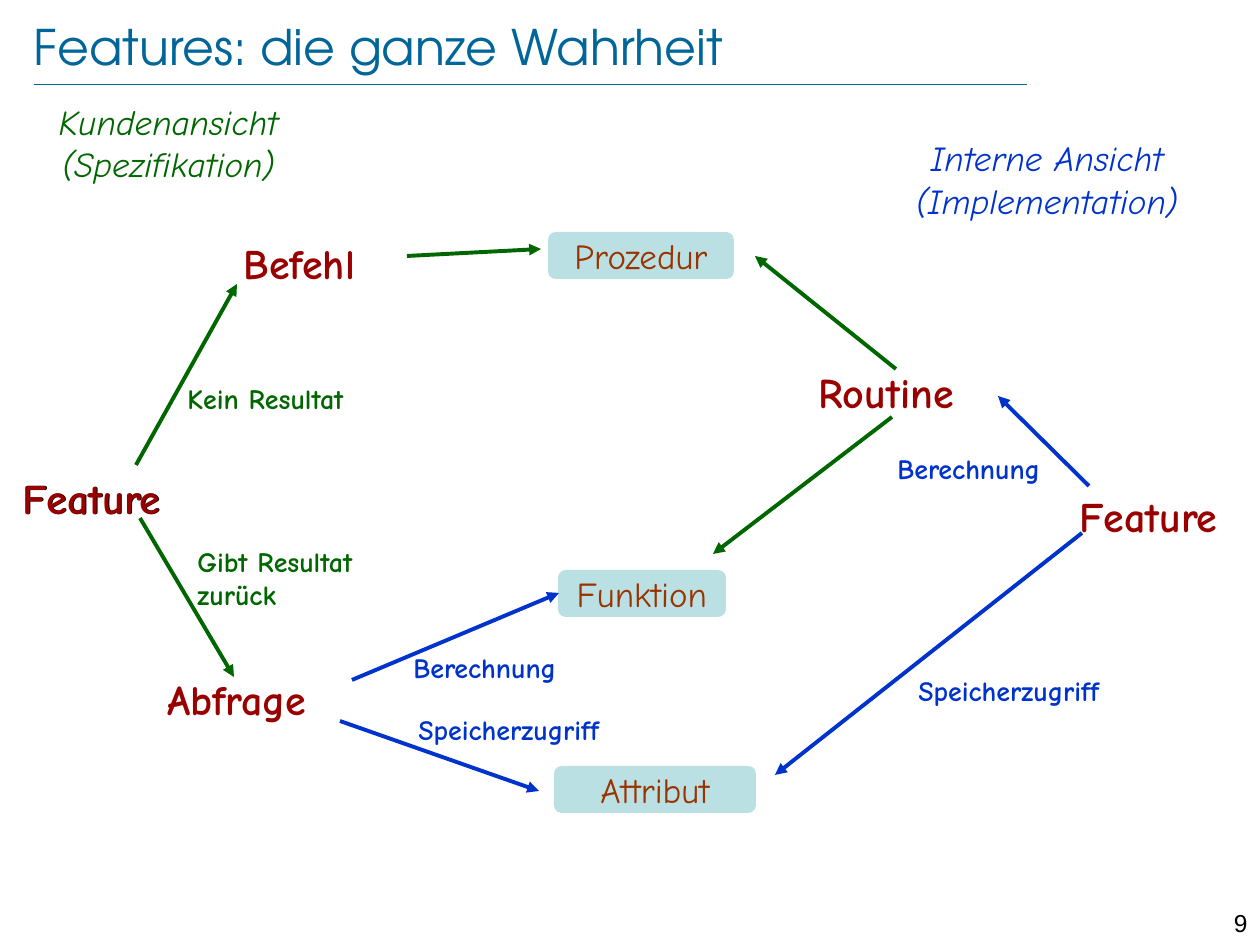
import lxml.etree
import pptx
import pptx.util
import pptx.dml.color
import pptx.enum.shapes
import pptx.enum.text
import pptx.oxml.ns

RGBColor = pptx.dml.color.RGBColor
ALIGN = pptx.enum.text.PP_ALIGN
ANCHOR = pptx.enum.text.MSO_ANCHOR
AUTO_SIZE = pptx.enum.text.MSO_AUTO_SIZE
SHAPES = pptx.enum.shapes.MSO_SHAPE
CONNECTOR = pptx.enum.shapes.MSO_CONNECTOR

PX = 914400 // 126
TEAL = RGBColor(0x00, 0x66, 0x99)
RED = RGBColor(0x99, 0x00, 0x00)
GREEN = RGBColor(0x00, 0x66, 0x00)
BLUE = RGBColor(0x00, 0x33, 0xCC)
BROWN = RGBColor(0x99, 0x33, 0x00)
PALE = RGBColor(0xBB, 0xE0, 0xE3)
BLACK = RGBColor(0x00, 0x00, 0x00)
HAND = "Comic Neue"

TITLE = ("Features: die ganze Wahrheit", (34, 16, 1095, 60))
PAGE_NUMBER = ("9", (1191, 902, 69, 30))

# Text, left, top, width, colour
CONCEPTS = [
    ("Feature", 1067, 484, 193, RED),
    ("Befehl", 231, 231, 248, RED),
    ("Abfrage", 155, 667, 215, RED),
    ("Feature", 11, 466, 189, BLACK),  # rim behind the next one
    ("Feature", 10, 466, 189, RED),
    ("Routine", 806, 360, 202, RED),
]
# Text, left, top, width, height, colour
EDGE_LABELS = [
    ("Kein Resultat", 175, 375, 207, 47, GREEN),
    ("Gibt Resultat zurück", 185, 538, 232, 81, GREEN),
    ("Berechnung", 401, 644, 188, 47, BLUE),
    ("Speicherzugriff", 406, 706, 265, 47, BLUE),
    ("Berechnung", 885, 445, 188, 47, BLUE),
    ("Speicherzugriff", 906, 667, 276, 47, BLUE),
]
# Lines, left, top, width, colour
VIEWS = [
    (["Kundenansicht", "(Spezifikation)"], 43, 101, 251, GREEN),
    (["Interne Ansicht", "(Implementation)"], 892, 137, 310, BLUE),
]
# Text, left, top, width
KINDS = [
    ("Prozedur", 548, 232, 186),
    ("Funktion", 558, 570, 168),
    ("Attribut", 554, 766, 202),
]
# Start, end, colour
ARROWS = [
    ((136, 465), (237, 284), GREEN),   # Feature to Befehl
    ((140, 518), (234, 677), GREEN),   # Feature to Abfrage
    ((407, 256), (541, 249), GREEN),   # Befehl to Prozedur
    ((352, 680), (559, 593), BLUE),    # Abfrage to Funktion
    ((340, 721), (539, 791), BLUE),    # Abfrage to Attribut
    ((896, 369), (755, 256), GREEN),   # Routine to Prozedur
    ((892, 417), (713, 554), GREEN),   # Routine to Funktion
    ((1089, 486), (998, 396), BLUE),   # Feature to Routine
    ((1082, 533), (775, 775), BLUE),   # Feature to Attribut
]


def write(shape, lines, size, color, font=HAND, align=ALIGN.LEFT,
          bold=False, italic=False, inset=True, grow=True, anchor=ANCHOR.TOP):
    frame = shape.text_frame
    frame.word_wrap = True
    frame.vertical_anchor = anchor
    frame.auto_size = AUTO_SIZE.SHAPE_TO_FIT_TEXT if grow else AUTO_SIZE.NONE
    if not inset:
        frame.margin_left = frame.margin_right = 0
        frame.margin_top = frame.margin_bottom = 0
    para = frame.paragraphs[0]
    para.alignment = align
    for index, line in enumerate(lines):
        if index:
            para.add_line_break()
        span = para.add_run()
        span.text = line
        span.font.name = font
        span.font.size = pptx.util.Pt(size)
        span.font.bold = bold
        span.font.italic = italic
        span.font.color.rgb = color


def add_box(page, *place):
    return page.shapes.add_textbox(*(value * PX for value in place))


def add_line(page, start, end, color, width, arrow=False):
    line = page.shapes.add_connector(
        CONNECTOR.STRAIGHT, *(value * PX for value in start + end))
    line.line.color.rgb = color
    line.line.width = pptx.util.Pt(width)
    properties = line._element.find(pptx.oxml.ns.qn("p:spPr"))
    if arrow:
        outline = properties.find(pptx.oxml.ns.qn("a:ln"))
        lxml.etree.SubElement(
            outline, pptx.oxml.ns.qn("a:tailEnd"), type="triangle")
    lxml.etree.SubElement(properties, pptx.oxml.ns.qn("a:effectLst"))


def main():
    deck = pptx.Presentation()
    deck.slide_width = 1260 * PX
    deck.slide_height = 945 * PX
    page = deck.slides.add_slide(deck.slide_layouts[6])

    # Title, rule and page number
    add_line(page, (34, 84), (1027, 84), TEAL, 0.25)
    text, place = TITLE
    write(add_box(page, *place), [text], 28, TEAL, "TeX Gyre Adventor",
          inset=False, grow=False, anchor=ANCHOR.MIDDLE)
    text, place = PAGE_NUMBER
    write(add_box(page, *place), [text], 14, BLACK, "Arial",
          align=ALIGN.RIGHT, grow=False)

    # Headings of the two views
    for lines, left, top, width, color in VIEWS:
        write(add_box(page, left, top, width, 84), lines, 20, color,
              align=ALIGN.CENTER, italic=True, inset=False)

    # Rounded boxes
    for text, left, top, width in KINDS:
        box = page.shapes.add_shape(
            SHAPES.ROUNDED_RECTANGLE,
            *(value * PX for value in (left, top, width, 47)))
        box.shadow.inherit = False
        box.fill.solid()
        box.fill.fore_color.rgb = PALE
        box.line.fill.background()
        write(box, [text], 20, BROWN, align=ALIGN.CENTER, inset=False)

    # Arrows
    for start, end, color in ARROWS:
        add_line(page, start, end, color, 2.25, arrow=True)

    # Concepts and arrow labels
    for text, left, top, width, color in CONCEPTS:
        write(add_box(page, left, top, width, 63), [text], 24, color, bold=True)
    for text, left, top, width, height, color in EDGE_LABELS:
        write(add_box(page, left, top, width, height), [text], 16, color,
              bold=True)

    deck.save("out.pptx")


if __name__ == "__main__":
    main()
